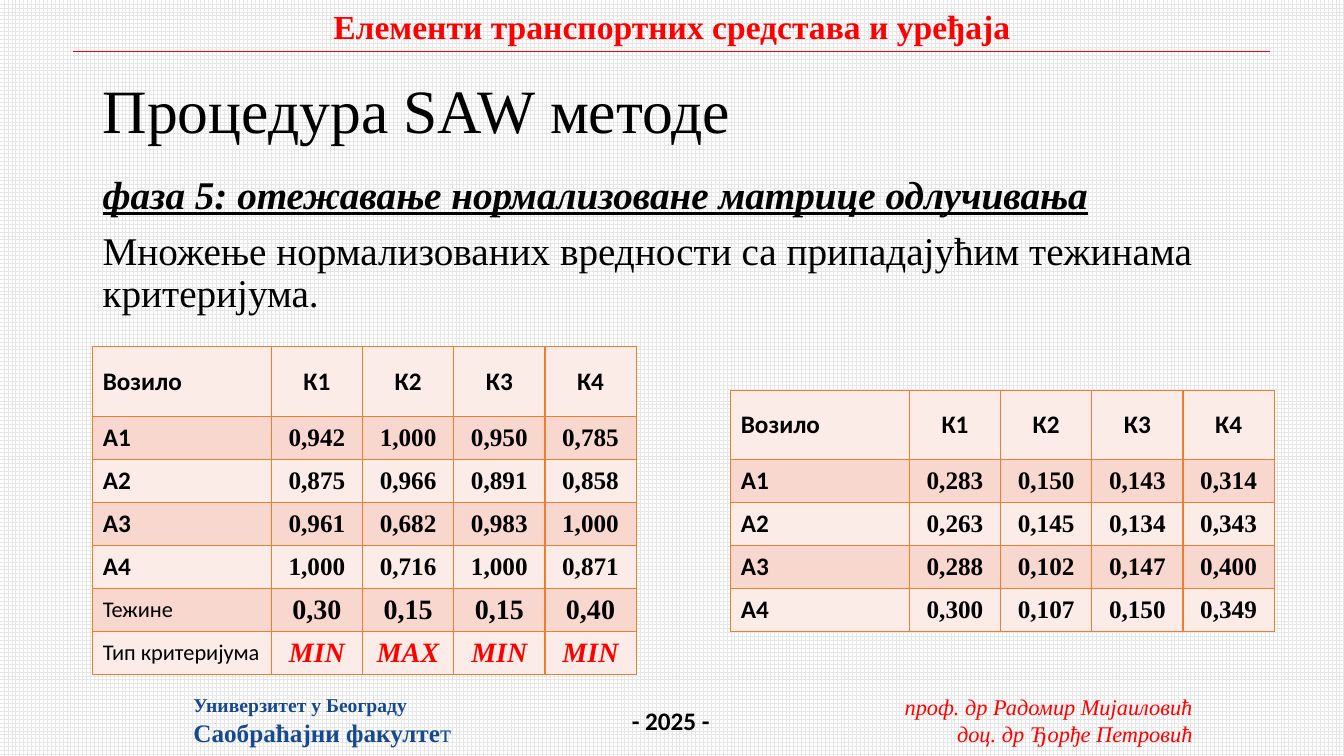
import pptx
import pptx.dml.color
import pptx.enum.dml
import pptx.enum.shapes
import pptx.enum.text
import pptx.oxml
import pptx.oxml.ns
import pptx.util

SERIF, SANS = "Times New Roman", "Calibri"
BLACK, RED, NAVY, ORANGE = "000000", "FF0000", "16498E", "ED7D31"
BANDS = ("FCECE8", "F8D7CE")
UNIT = pptx.util.Inches(1 / 12)
LEFT, CENTER, RIGHT = (getattr(pptx.enum.text.PP_ALIGN, side) for side in ("LEFT", "CENTER", "RIGHT"))
MIDDLE = pptx.enum.text.MSO_ANCHOR.MIDDLE

CRITERIA = ["Возило", "К1", "К2", "К3", "К4"]
NORMALIZED = [
    CRITERIA,
    ["А1", "0,942", "1,000", "0,950", "0,785"],
    ["А2", "0,875", "0,966", "0,891", "0,858"],
    ["А3", "0,961", "0,682", "0,983", "1,000"],
    ["А4", "1,000", "0,716", "1,000", "0,871"],
    ["Тежине", "0,30", "0,15", "0,15", "0,40"],
    ["Тип критеријума", "MIN", "MAX", "MIN", "MIN"],
]
WEIGHTED = [
    CRITERIA,
    ["А1", "0,283", "0,150", "0,143", "0,314"],
    ["А2", "0,263", "0,145", "0,134", "0,343"],
    ["А3", "0,288", "0,102", "0,147", "0,400"],
    ["А4", "0,300", "0,107", "0,150", "0,349"],
]


def grid(*cells):
    return [round(cell * UNIT) for cell in cells]


def color(code):
    return pptx.dml.color.RGBColor.from_string(code)


def write(paragraph, text, size=18, font=SERIF, ink=BLACK, bold=False, italic=False,
          underline=False, align=LEFT):
    paragraph.alignment = align
    run = paragraph.add_run()
    run.text = text
    run.font.size = pptx.util.Pt(size)
    run.font.name = font
    run.font.color.rgb = color(ink)
    run.font.bold, run.font.italic, run.font.underline = bold, italic, underline


def text_frame(slide, box, wrap=False):
    frame = slide.shapes.add_textbox(*grid(*box)).text_frame
    frame.word_wrap = wrap
    if not wrap:
        frame.auto_size = pptx.enum.text.MSO_AUTO_SIZE.SHAPE_TO_FIT_TEXT
    return frame


def course_header(slide, left, top, width, height):
    course = text_frame(slide, (left + 29.4, top, 83.88, height))
    write(course.paragraphs[0], "Елементи транспортних средстава и уређаја",
          size=24, ink=RED, bold=True, align=CENTER)
    rule = slide.shapes.add_connector(
        pptx.enum.shapes.MSO_CONNECTOR.STRAIGHT,
        *grid(left, top + height, left + width, top + height))
    rule.line.color.rgb = color(RED)
    rule.line.width = pptx.util.Pt(0.5)
    properties = rule.element.find(pptx.oxml.ns.qn("p:spPr"))
    properties.append(pptx.oxml.parse_xml(f"<a:effectLst {pptx.oxml.ns.nsdecls('a')}/>"))


def footer(slide, left, top, width, height):
    faculty = text_frame(slide, (left, top, 33.48, height))
    write(faculty.paragraphs[0], "Универзитет у Београду", size=14, ink=NAVY, bold=True)
    faculty_name = faculty.add_paragraph()
    write(faculty_name, "Саобраћајни факулте", ink=NAVY, bold=True)
    write(faculty_name, "т", ink=NAVY)

    year = text_frame(slide, (left + 52.2, top + 1.44, 11.76, 4.8))
    write(year.paragraphs[0], "- 2025 -", font=SANS, bold=True)

    lecturers = text_frame(slide, (left + width - 37.2, top, 37.2, height))
    names = ("проф. др Радомир Мијаиловић", "доц. др Ђорђе Петровић")
    for paragraph, name in zip((lecturers.paragraphs[0], lecturers.add_paragraph()), names):
        write(paragraph, name, size=16, ink=RED, italic=True, align=RIGHT)


def phase_text(slide, left, top, width, height):
    title = text_frame(slide, (left, top, width, 17.4), wrap=True)
    title.vertical_anchor = MIDDLE
    write(title.paragraphs[0], "Процедура SAW методе", size=44)

    body = text_frame(slide, (left, top + 15.48, width, height - 15.48), wrap=True)
    write(body.paragraphs[0], "фаза 5: отежавање нормализоване матрице одлучивања",
          size=28, bold=True, italic=True, underline=True)
    explanation = body.add_paragraph()
    explanation.space_before = pptx.util.Pt(10)
    write(explanation, "Множење нормализованих вредности са припадајућим тежинама критеријума.",
          size=28)
    for paragraph in (*title.paragraphs, *body.paragraphs):
        paragraph.line_spacing = 0.9


def outline(cell):
    properties = cell._tc.get_or_add_tcPr()
    for side in "LRTB":
        properties.append(pptx.oxml.parse_xml(
            f'<a:ln{side} {pptx.oxml.ns.nsdecls("a")} w="12700"><a:solidFill>'
            f'<a:srgbClr val="{ORANGE}"/></a:solidFill></a:ln{side}>'))


def cell_format(row, column, label):
    summary = label in ("Тежине", "Тип критеријума")
    if column == 0:
        return dict(font=SANS, size=16 if summary else 18, bold=not summary)
    look = dict(font=SERIF if row else SANS, size=20 if summary else 18, bold=True, align=CENTER)
    if label == "Тип критеријума":
        look.update(ink=RED, italic=True)
    return look


def decision_matrix(slide, left, top, values):
    column_widths = grid(21.26, *[10.86] * 4)
    row_heights = grid(8.28, *[5.12] * (len(values) - 1))
    table = slide.shapes.add_table(
        len(values), len(column_widths), *grid(left, top),
        sum(column_widths), sum(row_heights)).table
    table.first_row = table.horz_banding = False
    for column, width in zip(table.columns, column_widths):
        column.width = width
    for row, height in zip(table.rows, row_heights):
        row.height = height
    for row, entries in enumerate(values):
        for column, entry in enumerate(entries):
            cell = table.cell(row, column)
            outline(cell)
            cell.fill.solid()
            cell.fill.fore_color.rgb = color(BANDS[row % 2])
            cell.vertical_anchor = MIDDLE
            if row and column:
                cell.margin_left = cell.margin_right = pptx.util.Inches(0.07)
                cell.margin_top = cell.margin_bottom = 0
            write(cell.text_frame.paragraphs[0], entry, **cell_format(row, column, entries[0]))


def main():
    presentation = pptx.Presentation()
    presentation.slide_width, presentation.slide_height = grid(160, 90)
    slide = presentation.slides.add_slide(presentation.slide_layouts[6])
    backdrop = slide.background.fill
    backdrop.patterned()
    backdrop.pattern = pptx.enum.dml.MSO_PATTERN.LARGE_GRID
    backdrop.fore_color.rgb = color("E7E6E6")
    backdrop.back_color.rgb = color("FFFFFF")

    course_header(slide, 8.64, 0.12, 142.56, 6)
    footer(slide, 21.84, 81.96, 121.32, 7.68)
    phase_text(slide, 11.04, 4.8, 138, 76.2)
    decision_matrix(slide, 11.04, 41.28, NORMALIZED)
    decision_matrix(slide, 87, 46.44, WEIGHTED)
    presentation.save("out.pptx")


if __name__ == "__main__":
    main()
